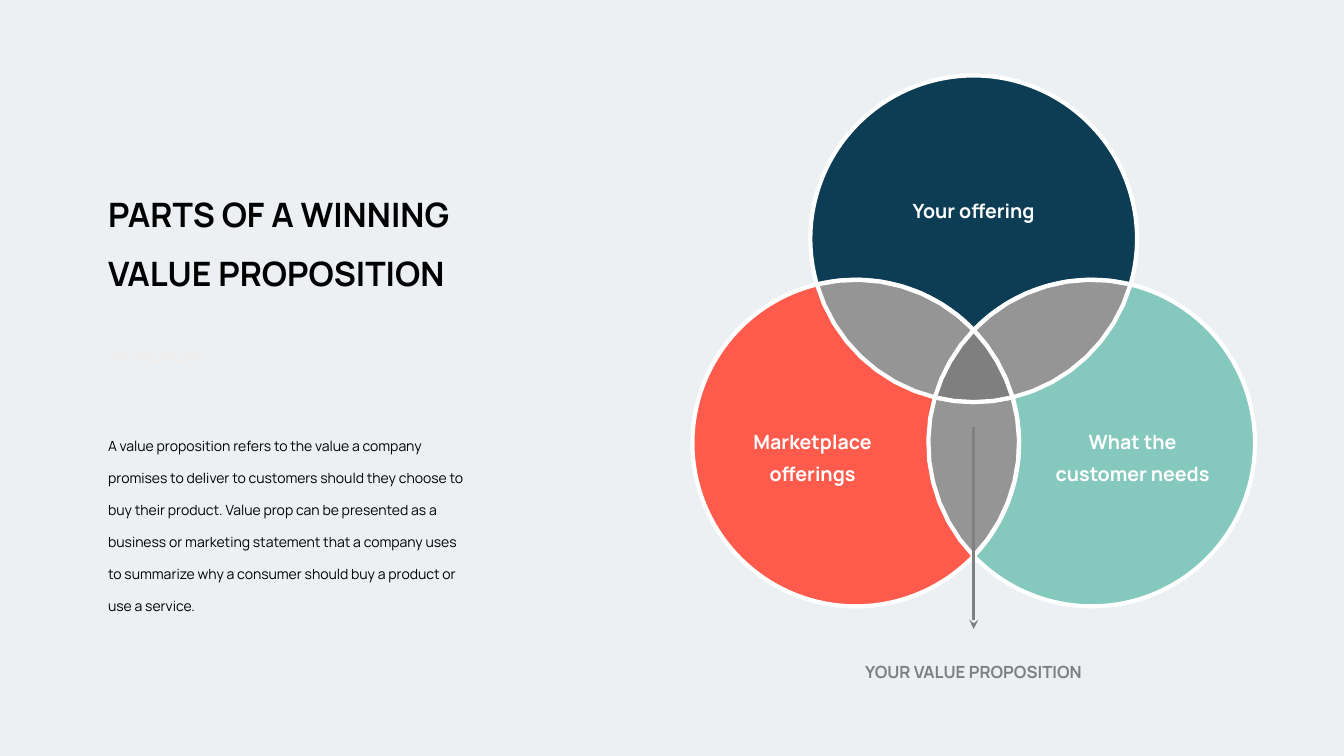
"""Build a slide with a three-circle Venn diagram of a winning value proposition."""
from dataclasses import dataclass
from math import acos, cos, degrees, pi, radians, sin, sqrt

from lxml.etree import SubElement
from pptx import Presentation
from pptx.dml.color import RGBColor
from pptx.enum.shapes import MSO_CONNECTOR, MSO_SHAPE
from pptx.enum.text import MSO_ANCHOR, MSO_AUTO_SIZE, PP_ALIGN
from pptx.oxml.ns import qn
from pptx.util import Inches, Pt


@dataclass(frozen=True)
class Theme:
    font: str = "Manrope"
    background: str = "ECF0F2"
    text: str = "000000"
    white: str = "FFFFFF"
    wave: str = "EEEEEE"
    circles: tuple = ("0C3D54", "85C8BD", "FF5B4C")
    overlap: str = "959595"
    core: str = "7F7F7F"
    title_size: int = 24
    body_size: int = 10
    label_size: int = 14
    result_size: int = 12
    outline: float = 3
    arrow: float = 2.25


theme = Theme()
presentation = Presentation()
presentation.slide_width = Inches(13.33)
presentation.slide_height = Inches(7.5)
column = presentation.slide_width / 100
row = presentation.slide_height / 100
slide = presentation.slides.add_slide(presentation.slide_layouts[1])
slide.background.fill.solid()
slide.background.fill.fore_color.rgb = RGBColor.from_string(theme.background)

radius = 21.6 * row
center_x, center_y = 72.45 * column, 49.6 * row
spacing = 31.2 * row
half_angle = degrees(acos(spacing / 2 / radius))
directions = [-90, 30, 150]
circle_centers = [
    (center_x + spacing / sqrt(3) * cos(radians(direction)),
     center_y + spacing / sqrt(3) * sin(radians(direction)))
    for direction in directions
]


def write(shape, box, text, size, color, line_spacing, bold=False, centered=True, inset=0):
    """Place a text shape on the grid and format its only paragraph."""
    left, top, width, height = box
    shape.left, shape.width = round(left * column), round(width * column)
    shape.top, shape.height = round(top * row), round(height * row)
    frame = shape.text_frame
    frame.text = text
    frame.word_wrap = True
    frame.auto_size = MSO_AUTO_SIZE.NONE
    frame.vertical_anchor = MSO_ANCHOR.MIDDLE if centered else MSO_ANCHOR.TOP
    frame.margin_left = frame.margin_right = Inches(inset)
    frame.margin_top = frame.margin_bottom = Inches(inset)
    paragraph = frame.paragraphs[0]
    paragraph.alignment = PP_ALIGN.CENTER if centered else PP_ALIGN.LEFT
    paragraph.line_spacing = line_spacing
    paragraph.space_before = Pt(0)
    font = paragraph.runs[0].font
    font.name, font.size, font.bold = theme.font, Pt(size), bold
    font.color.rgb = RGBColor.from_string(color)


def arc(index, start, end):
    """Return points on a circle from start up to, but without, end."""
    x, y = circle_centers[index]
    steps = round(abs(end - start) / 7.5)
    angles = [radians(directions[index] + start + (end - start) * step / steps)
              for step in range(steps)]
    return [(x + radius * cos(angle), y + radius * sin(angle)) for angle in angles]


title, body = slide.placeholders
write(title, (7.82, 22.87, 30, 13.6), "PARTS OF A WINNING VALUE PROPOSITION",
      theme.title_size, theme.text, 1.45, bold=True, centered=False, inset=0.03)
write(body, (7.82, 55.47, 26.93, 21.6),
      "A value proposition refers to the value a company promises to deliver to customers "
      "should they choose to buy their product. Value prop can be presented as a business "
      "or marketing statement that a company uses to summarize why a consumer should buy "
      "a product or use a service.",
      theme.body_size, theme.text, 1.9, centered=False, inset=0.03)
body_properties = body.text_frame.paragraphs[0]._p.get_or_add_pPr()
body_properties.set("marL", "0")
body_properties.set("indent", "0")
SubElement(body_properties, qn("a:buNone"))

wave_steps = 32
wave_top = [
    ((7.85 + 7.43 * step / wave_steps) * column,
     (46.93 - 0.43 * cos(2 * pi * (4 * step / wave_steps - 0.5))) * row)
    for step in range(wave_steps + 1)
]
wave_bottom = [(x, y + 0.87 * row) for x, y in reversed(wave_top)]

outer, inner_start, inner_end = 150 - half_angle, 210 - half_angle, 150 + half_angle
outlines = [(wave_top + wave_bottom, theme.wave, False)]
for first in range(3):
    second, third = (first + 1) % 3, (first + 2) % 3
    lens = (arc(first, outer, inner_start) + arc(third, inner_end, inner_start)
            + arc(second, inner_end, 360 - outer))
    outlines.append((lens, theme.overlap, True))
core = [point for index in range(3) for point in arc(index, inner_start, inner_end)]
outlines.append((core, theme.core, True))

painted = []
for (x, y), color in zip(circle_centers, theme.circles):
    circle = slide.shapes.add_shape(
        MSO_SHAPE.OVAL, round(x - radius), round(y - radius),
        round(2 * radius), round(2 * radius))
    painted.append((circle, color, True))
for points, color, outlined in outlines:
    points = [(round(x), round(y)) for x, y in points]
    builder = slide.shapes.build_freeform(*points[0])
    builder.add_line_segments(points[1:], close=True)
    painted.append((builder.convert_to_shape(), color, outlined))
for shape, color, outlined in painted:
    shape.shadow.inherit = False
    shape.fill.solid()
    shape.fill.fore_color.rgb = RGBColor.from_string(color)
    if outlined:
        shape.line.color.rgb = RGBColor.from_string(theme.white)
        shape.line.width = Pt(theme.outline)
    else:
        shape.line.fill.background()

labels = [
    ("Marketplace offerings", (54.05, 56.48, 12.83, 7.07), theme.label_size, theme.white, 1.34),
    ("What the customer needs", (77.75, 56.48, 13.05, 7.07), theme.label_size, theme.white, 1.34),
    ("Your offering", (67.38, 25.6, 10.13, 3.47), theme.label_size, theme.white, 1.34),
    ("YOUR VALUE PROPOSITION", (58.08, 86.47, 28.73, 3.33), theme.result_size, theme.core, 1.57),
]
for text, box, size, color, line_spacing in labels:
    label = slide.shapes.add_textbox(0, 0, 0, 0)
    write(label, box, text, size, color, line_spacing, bold=True)

arrow = slide.shapes.add_connector(
    MSO_CONNECTOR.STRAIGHT, round(center_x), round(83.2 * row),
    round(center_x), round(56.48 * row))
arrow.line.color.rgb = RGBColor.from_string(theme.core)
arrow.line.width = Pt(theme.arrow)
SubElement(arrow.line._get_or_add_ln(), qn("a:headEnd"), type="stealth")
SubElement(arrow._element.spPr, qn("a:effectLst"))

presentation.save("out.pptx")
